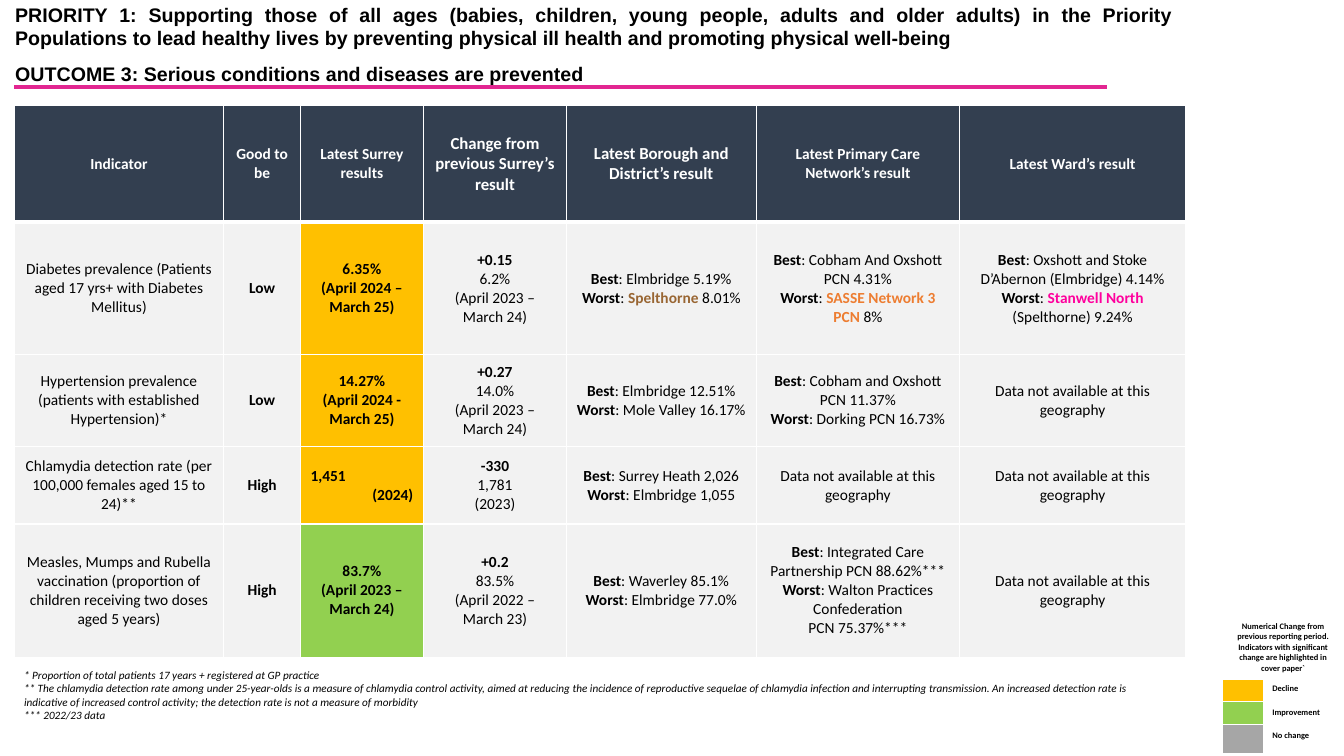
from lxml.etree import SubElement
from pptx import Presentation
from pptx.dml.color import RGBColor
from pptx.enum.shapes import MSO_CONNECTOR
from pptx.enum.text import MSO_ANCHOR, MSO_AUTO_SIZE, PP_ALIGN
from pptx.oxml.ns import qn
from pptx.util import Inches, Pt

COLORS = {
    "black": "000000", "white": "FFFFFF", "navy": "333F50", "light": "F2F2F2",
    "decline": "FFC000", "improvement": "92D050", "steady": "A6A6A6",
    "rule": "E22691", "brown": "996633", "orange": "ED7D31", "pink": "FF009D",
}
TITLE = [
    ("PRIORITY 1: Supporting those of all ages (babies, children, young people, adults and older adults) "
     "in the Priority Populations to lead healthy lives by preventing physical ill health and promoting "
     "physical well-being", 1.0),
    ("OUTCOME 3: Serious conditions and diseases are prevented", 1.5),
]
HEADERS = [
    ("Indicator", 11, 2.08),
    ("Good to be", 11, 0.76),
    ("Latest Surrey results", 11, 1.22),
    ("Change from previous Surrey’s result", 12, 1.42),
    ("Latest Borough and District’s result", 12, 1.88),
    ("Latest Primary Care Network’s result", 11, 2.02),
    ("Latest Ward’s result", 11, 2.24),
]
HEADER_HEIGHT = 1.15
NO_DATA = "Data not available at this geography"
# Text between bars is bold; each line is a paragraph.
INDICATORS = [
    (1.32, "decline", [
        "Diabetes prevalence (Patients aged 17 yrs+ with Diabetes Mellitus)",
        "|Low|",
        "|6.35%|\n|(April 2024 – March 25)|",
        "|+0.15|\n6.2%\n(April 2023 – March 24)",
        "|Best|: Elmbridge 5.19%\n|Worst|: |Spelthorne| 8.01%",
        "|Best|: Cobham And Oxshott PCN 4.31%\n|Worst|: |SASSE Network 3 PCN| 8%",
        "|Best|: Oxshott and Stoke D’Abernon (Elmbridge) 4.14%\n|Worst|: |Stanwell North| (Spelthorne) 9.24%",
    ]),
    (0.91, "decline", [
        "Hypertension prevalence (patients with established Hypertension)*",
        "|Low|",
        "|14.27%|\n|(April 2024 - March 25)|",
        "|+0.27|\n14.0%\n(April 2023 – March 24)",
        "|Best|: Elmbridge 12.51%\n|Worst|: Mole Valley 16.17%",
        "|Best|: Cobham and Oxshott PCN 11.37%\n|Worst|: Dorking PCN 16.73%",
        NO_DATA,
    ]),
    (0.77, "decline", [
        "Chlamydia detection rate (per 100,000 females aged 15 to 24)**",
        "|High|",
        "|1,451|\n|(2024)|",
        "|-330|\n1,781\n(2023)",
        "|Best|: Surrey Heath 2,026\n|Worst|: Elmbridge 1,055",
        NO_DATA,
        NO_DATA,
    ]),
    (1.32, "improvement", [
        "Measles, Mumps and Rubella vaccination (proportion of children receiving two doses aged 5 years)",
        "|High|",
        "|83.7%|\n|(April 2023 – March 24)|",
        "|+0.2|\n83.5%\n(April 2022 –\nMarch 23)",
        "|Best|: Waverley 85.1%\n|Worst|: Elmbridge 77.0%",
        "|Best|: Integrated Care Partnership PCN 88.62%***\n"
        "|Worst|: Walton Practices Confederation\nPCN 75.37%***",
        NO_DATA,
    ]),
]
HIGHLIGHTS = {"Spelthorne": "brown", "SASSE Network 3 PCN": "orange", "Stanwell North": "pink"}
SPLIT_ALIGNMENT = {"|1,451|": PP_ALIGN.LEFT, "|(2024)|": PP_ALIGN.RIGHT}
RESULT_COLUMN = 2
FOOTNOTES = [
    "* Proportion of total patients 17 years + registered at GP practice",
    "** The chlamydia detection rate among under 25-year-olds is a measure of chlamydia control activity, "
    "aimed at reducing the incidence of reproductive sequelae of chlamydia infection and interrupting "
    "transmission. An increased detection rate is indicative of increased control activity; the detection "
    "rate is not a measure of morbidity",
    "*** 2022/23 data",
]
LEGEND_NOTE = ("Numerical Change from previous reporting period. Indicators with significant change "
               "are highlighted in cover paper`")
LEGEND = [("Decline", "decline", 0.23), ("Improvement", "improvement", 0.23), ("No change", "steady", 0.28)]
LEGEND_COLUMNS = [0.41, 0.8]
LEGEND_NOTE_HEIGHT = 0.55
LEFT, TABLE_TOP = 0.14, 1.05


def color(name):
    return RGBColor.from_string(COLORS[name])


def add_run(paragraph, text, size, shade="black", bold=False, italic=False, font="Calibri"):
    run = paragraph.add_run()
    run.text = text
    run.font.name, run.font.size = font, Pt(size)
    run.font.bold, run.font.italic = bold, italic
    run.font.color.rgb = color(shade)


def paragraphs(frame, items):
    for index, item in enumerate(items):
        yield (frame.add_paragraph() if index else frame.paragraphs[0]), item


def style_cell(cell, fill, width, top, bottom):
    properties = cell._tc.get_or_add_tcPr()
    for side, points in (("L", width), ("R", width), ("T", top), ("B", bottom)):
        line = SubElement(properties, qn(f"a:ln{side}"), w=str(Pt(points)))
        SubElement(SubElement(line, qn("a:solidFill")), qn("a:srgbClr"), val=COLORS["white"])
    if fill:
        cell.fill.solid()
        cell.fill.fore_color.rgb = color(fill)
    else:
        cell.fill.background()


def add_grid(slide, left, top, widths, heights):
    frame = slide.shapes.add_table(len(heights), len(widths), Inches(left), Inches(top),
                                   Inches(sum(widths)), Inches(sum(heights)))
    table = frame.table
    table.first_row = table.horz_banding = False
    for column, width in zip(table.columns, widths):
        column.width = Inches(width)
    for row, height in zip(table.rows, heights):
        row.height = Inches(height)
    return table


def add_title(slide):
    title = slide.shapes.title
    title.left, title.top, title.width, title.height = map(Inches, (0.05, 0.13, 11.69, 0.61))
    title.fill.solid()
    title.fill.fore_color.rgb = color("white")
    title.line.color.rgb = color("white")
    title.line.width = Pt(0.75)
    frame = title.text_frame
    frame.word_wrap, frame.auto_size = True, MSO_AUTO_SIZE.NONE
    frame.vertical_anchor = MSO_ANCHOR.MIDDLE
    for paragraph, (text, spacing) in paragraphs(frame, TITLE):
        paragraph.alignment, paragraph.line_spacing = PP_ALIGN.JUSTIFY, spacing
        add_run(paragraph, text, 14, bold=True, font="Arial")


def add_rule(slide):
    rule = slide.shapes.add_connector(MSO_CONNECTOR.STRAIGHT, Inches(LEFT), Inches(0.86),
                                      Inches(10.98), Inches(0.86))
    rule.line.color.rgb = color("rule")
    rule.line.width = Pt(3)
    SubElement(rule._element.spPr, qn("a:effectLst"))


def add_indicators(slide):
    heights = [HEADER_HEIGHT] + [height for height, _, _ in INDICATORS]
    table = add_grid(slide, LEFT, TABLE_TOP, [width for _, _, width in HEADERS], heights)
    for column, (text, size, _) in enumerate(HEADERS):
        cell = table.cell(0, column)
        style_cell(cell, "navy", 1, 1, 3)
        cell.vertical_anchor = MSO_ANCHOR.MIDDLE
        paragraph = cell.text_frame.paragraphs[0]
        paragraph.alignment = PP_ALIGN.CENTER
        add_run(paragraph, text, size, "white", bold=True)
    for row, (_, status, texts) in enumerate(INDICATORS, 1):
        for column, text in enumerate(texts):
            cell = table.cell(row, column)
            style_cell(cell, status if column == RESULT_COLUMN else "light", 1, 3 if row == 1 else 1, 1)
            cell.vertical_anchor = MSO_ANCHOR.MIDDLE
            for paragraph, line in paragraphs(cell.text_frame, text.split("\n")):
                paragraph.alignment = SPLIT_ALIGNMENT.get(line, PP_ALIGN.CENTER)
                for index, part in enumerate(line.split("|")):
                    if part:
                        add_run(paragraph, part, 11, HIGHLIGHTS.get(part, "black"), bold=index % 2 == 1)


def add_footnotes(slide):
    box = slide.shapes.add_textbox(Inches(LEFT), Inches(6.58), Inches(11.6), Inches(0.64))
    frame = box.text_frame
    frame.word_wrap, frame.auto_size = True, MSO_AUTO_SIZE.SHAPE_TO_FIT_TEXT
    for paragraph, note in paragraphs(frame, FOOTNOTES):
        add_run(paragraph, note, 8, italic=True)


def add_legend(slide):
    heights = [LEGEND_NOTE_HEIGHT] + [height for _, _, height in LEGEND]
    table = add_grid(slide, 12.12, 6.11, LEGEND_COLUMNS, heights)
    table.cell(0, 0).merge(table.cell(0, 1))
    rows = [(LEGEND_NOTE, "", None)] + [("", label, fill) for label, fill, _ in LEGEND]
    for row, (*texts, fill) in enumerate(rows):
        for column, text in enumerate(texts):
            cell = table.cell(row, column)
            style_cell(cell, None if column else fill, 0.92, 2.78 if row == 1 else 0.92, 0.92 if row else 2.78)
            cell.margin_left = cell.margin_right = Inches(0.09)
            cell.margin_top = cell.margin_bottom = Inches(0.05)
            paragraph = cell.text_frame.paragraphs[0]
            paragraph.line_spacing = Pt(7.5)
            paragraph.alignment = PP_ALIGN.LEFT if row else PP_ALIGN.CENTER
            if text:
                add_run(paragraph, text, 6, bold=True)
            else:
                SubElement(paragraph._p, qn("a:endParaRPr"), sz="600")


def main():
    presentation = Presentation()
    presentation.slide_width, presentation.slide_height = Inches(13.33), Inches(7.5)
    slide = presentation.slides.add_slide(presentation.slide_layouts[5])
    for add_part in (add_title, add_rule, add_indicators, add_footnotes, add_legend):
        add_part(slide)
    presentation.save("out.pptx")


if __name__ == "__main__":
    main()
